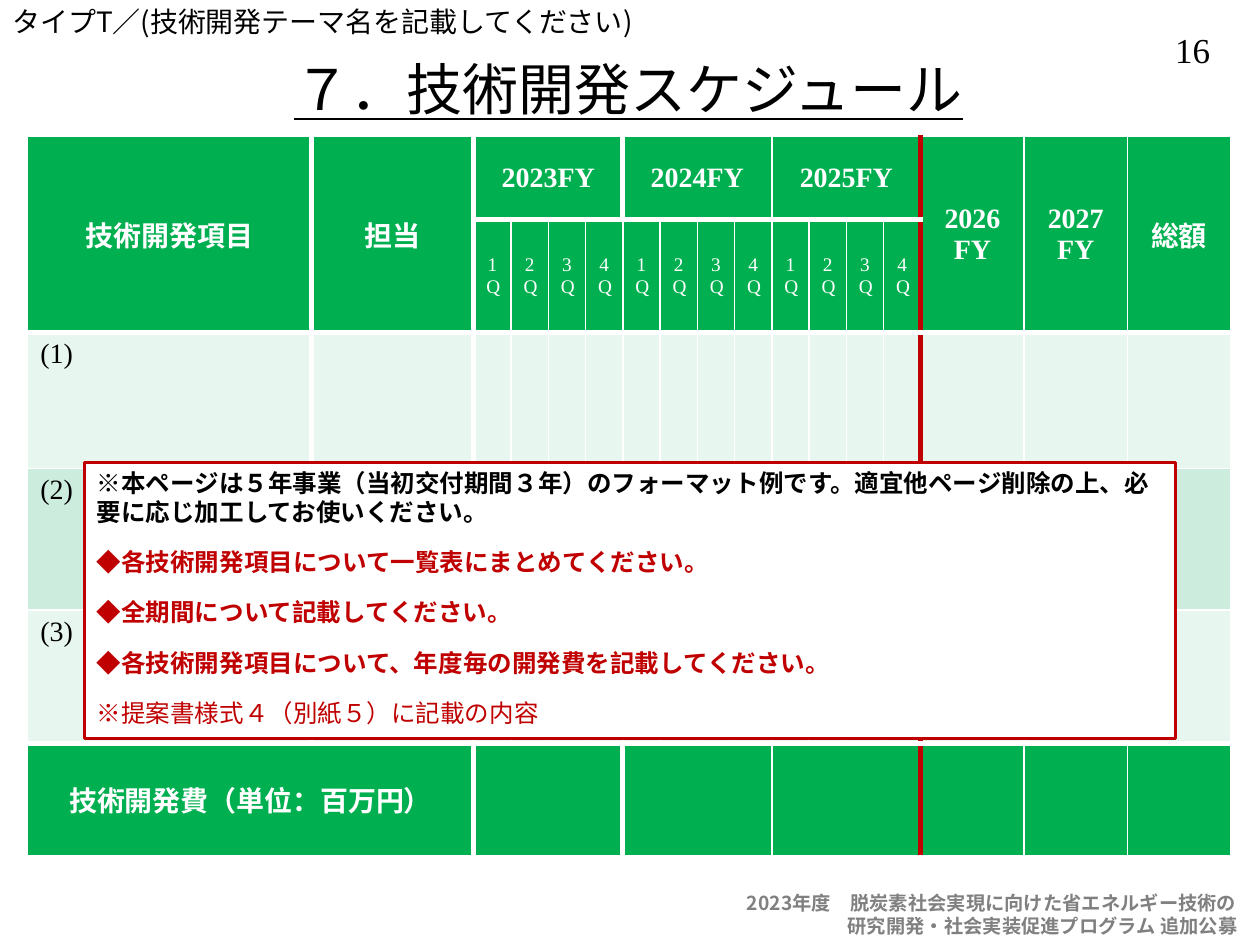
from dataclasses import dataclass

from lxml import etree
from pptx import Presentation
from pptx.dml.color import RGBColor
from pptx.enum.shapes import MSO_SHAPE
from pptx.enum.text import MSO_ANCHOR as Anchor, PP_ALIGN as Align
from pptx.oxml.ns import qn
from pptx.util import Inches, Pt


@dataclass(frozen=True)
class Theme:
    black: str = "000000"
    white: str = "FFFFFF"
    gray: str = "808080"
    red: str = "C00000"
    green: str = "00B050"
    light: str = "E7F6EF"
    medium: str = "CCECDE"
    gothic: str = "Noto Sans CJK JP"
    serif: str = "Times New Roman"
    title: int = 32
    number: int = 20
    body: int = 16
    note: int = 14
    small: int = 11
    thin: int = 1
    thick: int = 3


THEME = Theme()
YEARS = ["2023FY", "2024FY", "2025FY"]
LATER_COLUMNS = ["2026\nFY", "2027\nFY", "総額"]
ITEMS = ["(1)", "(2)", "(3)"]
QUARTERS = 4
FIRST_QUARTER = 2
FIRST_LATER = FIRST_QUARTER + QUARTERS * len(YEARS)


def style_text(frame, size, color, font=THEME.gothic, bold=False, align=Align.LEFT):
    for paragraph in frame.paragraphs:
        paragraph.alignment = align
        for run in paragraph.runs:
            run.font.size = Pt(size)
            run.font.bold = bold
            run.font.name = font
            run.font.color.rgb = RGBColor.from_string(color)
            east_asian = etree.SubElement(run.font._element, qn("a:ea"))
            east_asian.set("typeface", THEME.gothic)


def add_text(slide, box, text, size, color, anchor=Anchor.TOP, wrap=True, **style):
    frame = slide.shapes.add_textbox(*map(Inches, box)).text_frame
    frame.word_wrap = wrap
    frame.vertical_anchor = anchor
    frame.text = text
    style_text(frame, size, color, **style)
    return frame


def add_header(slide):
    add_text(slide, (9.14, 0.18, 0.65, 0.43), "16", THEME.number, THEME.black,
             wrap=False, font=THEME.serif, align=Align.CENTER)
    add_text(slide, (0, -0.01, 8.4, 0.37),
             "タイプT／(技術開発テーマ名を記載してください)", THEME.body, THEME.black)
    title = add_text(slide, (0.74, 0.35, 8.5, 0.7), "７．技術開発スケジュール",
                     THEME.title, THEME.black, anchor=Anchor.MIDDLE, align=Align.CENTER)
    title.paragraphs[0].runs[0].font.underline = True


def add_footer(slide, box):
    frame = add_text(slide, box, "2023年度　脱炭素社会実現に向けた省エネルギー技術の\n"
                     "研究開発・社会実装促進プログラム 追加公募",
                     THEME.small, THEME.gray, bold=True)
    for paragraph in frame.paragraphs:
        paragraph.line_spacing = Pt(13)
    frame.paragraphs[1]._p.get_or_add_pPr().set("marL", str(Inches(0.8)))


def fill_cell(cell, fill, text="", size=THEME.body, color=THEME.white, bold=True,
              align=Align.CENTER, anchor=Anchor.MIDDLE):
    cell.fill.solid()
    cell.fill.fore_color.rgb = RGBColor.from_string(fill)
    cell.vertical_anchor = anchor
    cell.text = text
    style_text(cell.text_frame, size, color, THEME.serif, bold, align)


def vertical_edge(column, row, last_row):
    """Color and width of the line to the left of a column."""
    if column == FIRST_LATER:
        return THEME.red, THEME.thick
    year_edge = column == FIRST_QUARTER + QUARTERS and row in (0, last_row)
    thick = column in (1, FIRST_QUARTER) or year_edge
    return THEME.white, THEME.thick if thick else THEME.thin


def horizontal_edge(row, last_row):
    """Color and width of the line above a row."""
    return THEME.white, THEME.thick if row in (1, 2, last_row) else THEME.thin


def set_borders(cell, row, column, last_row):
    properties = cell._tc.get_or_add_tcPr()
    edges = {
        "a:lnL": vertical_edge(column, row, last_row),
        "a:lnR": vertical_edge(column + cell.span_width, row, last_row),
        "a:lnT": horizontal_edge(row, last_row),
        "a:lnB": horizontal_edge(row + cell.span_height, last_row),
    }
    for position, (tag, (color, width)) in enumerate(edges.items()):
        line = etree.Element(qn(tag), w=str(Pt(width)))
        solid = etree.SubElement(line, qn("a:solidFill"))
        etree.SubElement(solid, qn("a:srgbClr"), val=color)
        properties.insert(position, line)


def add_schedule(slide, box):
    left, top, width, height = box
    outer = [2.25, 1.29]
    later = [0.82] * len(LATER_COLUMNS)
    quarter_count = QUARTERS * len(YEARS)
    quarter = (width - sum(outer) - sum(later)) / quarter_count
    widths = outer + [quarter] * quarter_count + later
    heights = [0.66, 0.9, 1.08, 1.12, 1.06, 0.89]
    last_row = len(heights) - 1
    table = slide.shapes.add_table(len(heights), len(widths),
                                   *map(Inches, (left, top, width, height))).table
    table.first_row = table.horz_banding = False
    for column, size in zip(table.columns, widths):
        column.width = Inches(size)
    for row, size in zip(table.rows, heights):
        row.height = Inches(size)

    # Heading rows
    headings = dict(enumerate(["技術開発項目", "担当"]))
    headings.update(enumerate(LATER_COLUMNS, FIRST_LATER))
    for column, text in headings.items():
        table.cell(0, column).merge(table.cell(1, column))
        fill_cell(table.cell(0, column), THEME.green, text)
    for index, year in enumerate(YEARS):
        start = FIRST_QUARTER + index * QUARTERS
        for row, text in ((0, year), (last_row, "")):
            table.cell(row, start).merge(table.cell(row, start + QUARTERS - 1))
            fill_cell(table.cell(row, start), THEME.green, text)
        for number in range(QUARTERS):
            fill_cell(table.cell(1, start + number), THEME.green, f"{number + 1}Q",
                      THEME.small, bold=False)

    # Development items
    for row, item in enumerate(ITEMS, 2):
        fill = THEME.medium if row % 2 else THEME.light
        for column in range(len(widths)):
            fill_cell(table.cell(row, column), fill, "" if column else item,
                      color=THEME.black, bold=False, align=Align.LEFT, anchor=Anchor.TOP)

    # Cost row
    table.cell(last_row, 0).merge(table.cell(last_row, 1))
    fill_cell(table.cell(last_row, 0), THEME.green, "技術開発費（単位：百万円）")
    for column in range(FIRST_LATER, len(widths)):
        fill_cell(table.cell(last_row, column), THEME.green)

    for row in range(len(heights)):
        for column in range(len(widths)):
            cell = table.cell(row, column)
            if not cell.is_spanned:
                set_borders(cell, row, column, last_row)


def add_note(slide, box):
    shape = slide.shapes.add_shape(MSO_SHAPE.RECTANGLE, *map(Inches, box))
    shape.shadow.inherit = False
    shape.fill.solid()
    shape.fill.fore_color.rgb = RGBColor.from_string(THEME.white)
    shape.line.color.rgb = RGBColor.from_string(THEME.red)
    shape.line.width = Pt(1.5)
    frame = shape.text_frame
    frame.word_wrap = True
    frame.vertical_anchor = Anchor.TOP
    frame.text = "\n".join([
        "※本ページは５年事業（当初交付期間３年）のフォーマット例です。"
        "適宜他ページ削除の上、必要に応じ加工してお使いください。",
        "◆各技術開発項目について一覧表にまとめてください。",
        "◆全期間について記載してください。",
        "◆各技術開発項目について、年度毎の開発費を記載してください。",
        "※提案書様式４（別紙５）に記載の内容",
    ])
    style_text(frame, THEME.note, THEME.red, bold=True)
    first, *others = frame.paragraphs
    first.runs[0].font.color.rgb = RGBColor.from_string(THEME.black)
    others[-1].runs[0].font.bold = False
    for paragraph in frame.paragraphs:
        paragraph.line_spacing = Pt(16.6)
    for paragraph in others:
        paragraph.space_before = Pt(12)


def main():
    presentation = Presentation()
    presentation.slide_width = Inches(10)
    presentation.slide_height = Inches(7.5)
    slide = presentation.slides.add_slide(presentation.slide_layouts[6])
    add_header(slide)
    add_footer(slide, (5.83, 7.03, 4.17, 0.47))
    add_schedule(slide, (0.22, 1.08, 9.55, 5.71))
    add_note(slide, (0.67, 3.67, 8.66, 2.19))
    presentation.save("out.pptx")


if __name__ == "__main__":
    main()
